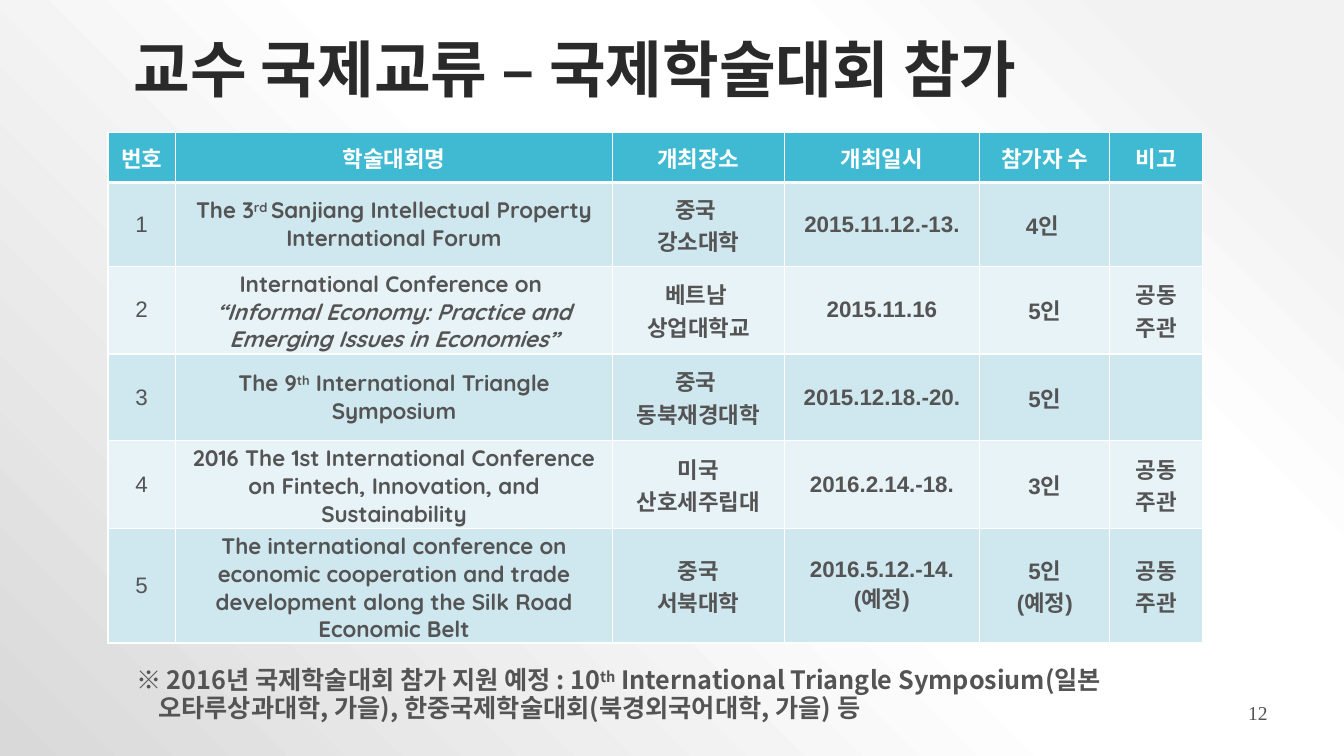
from lxml import etree
from pptx import Presentation
from pptx.dml.color import RGBColor
from pptx.enum.text import MSO_ANCHOR, PP_ALIGN
from pptx.oxml import parse_xml
from pptx.oxml.ns import qn
from pptx.util import Cm, Pt

CENTER, LEFT, RIGHT = PP_ALIGN.CENTER, PP_ALIGN.LEFT, PP_ALIGN.RIGHT
TOP, MIDDLE = MSO_ANCHOR.TOP, MSO_ANCHOR.MIDDLE
DRAWING = "http://schemas.openxmlformats.org/drawingml/2006/main"

KOREAN = "Noto Sans CJK KR"
WHITE, TEAL, GREY, DARK = "FFFFFF", "40BAD2", "545454", "2A2A2A"
BANDS = ("E8F3F7", "CFE7EE")
BACKGROUND_STOPS = [(10, "F2F2F2"), (28, WHITE), (48, WHITE), (100, "D9D9D9")]

TITLE_FORMAT = {"size": Pt(44), "name": KOREAN, "bold": True}
NUMBER_FORMAT = {"size": Pt(14), "name": "Times New Roman"}
NOTE_FORMAT = {"size": Pt(18), "name": KOREAN, "bold": True}
CELL_FORMAT = {"size": Pt(16), "name": "Arial", "bold": True}
INDEX_FORMAT = {**CELL_FORMAT, "bold": False}
CONFERENCE_FORMAT = {**CELL_FORMAT, "name": "Quicksand"}

COLUMN_WIDTHS = (1.7, 11.02, 4.32, 4.93, 3.28, 2.34)
ROW_HEIGHTS = (1.27, 2.11, 2.01, 2.18, 1.8, 2.44)
CELL_MARGINS = {"margin_left": Cm(0.18), "margin_right": Cm(0.18),
                "margin_top": Cm(0.09), "margin_bottom": Cm(0.09)}

CONFERENCES = [
    ("번호", "학술대회명", "개최장소", "개최일시", "참가자 수", "비고"),
    ("1", "The 3^rd ^Sanjiang Intellectual Property International Forum",
     "중국 \n강소대학", "2015.11.12.-13.", "4인 ", ""),
    ("2", "International Conference on \n"
     "“Informal Economy: Practice and Emerging Issues in Economies”",
     "베트남 \n상업대학교", "2015.11.16", "5인", "공동\n주관"),
    ("3", "The 9^th^ International Triangle Symposium",
     "중국 \n동북재경대학", "2015.12.18.-20.", "5인", ""),
    ("4", "2016 The 1st International Conference on Fintech, Innovation, and Sustainability",
     "미국\n산호세주립대", "2016.2.14.-18.", "3인", "공동\n주관"),
    ("5", "The international conference on economic cooperation and trade "
     "development along the Silk Road Economic Belt",
     "중국\n서북대학", "2016.5.12.-14.\n(예정)", "5인\n(예정)", "공동\n주관"),
]
NOTE = ("※ 2016년 국제학술대회 참가 지원 예정 : 10^th^ International Triangle Symposium(일본\n"
        "오타루상과대학, 가을), 한중국제학술대회(북경외국어대학, 가을) 등")


def paint(fill, color):
    fill.solid()
    fill.fore_color.rgb = RGBColor.from_string(color)


def add_span(para, text, formats, color, raised):
    span = para.add_run()
    span.text = text
    for key, value in formats.items():
        setattr(span.font, key, value)
    paint(span.font.fill, color)
    properties = span._r.get_or_add_rPr()
    etree.SubElement(properties, qn("a:ea"), typeface=KOREAN)
    if raised:
        properties.set("baseline", "30000")


def write(frame, text, formats, color, align, spacing=1.0):
    for index, line in enumerate(text.split("\n")):
        para = frame.add_paragraph() if index else frame.paragraphs[0]
        para.alignment = align
        para.line_spacing = spacing
        line_formats = {**formats, "italic": line.startswith("“")}
        for part, piece in enumerate(line.split("^")):
            if piece:
                add_span(para, piece, line_formats, color, part % 2 == 1)


def add_text(page, place, text, formats, color, align=LEFT, anchor=TOP, spacing=1.0):
    box = page.shapes.add_textbox(*map(Cm, place))
    box.text_frame.word_wrap = True
    box.text_frame.vertical_anchor = anchor
    write(box.text_frame, text, formats, color, align, spacing)
    return box


def set_borders(cell, top, bottom):
    properties = cell._tc.get_or_add_tcPr()
    widths = {"lnL": 1, "lnR": 1, "lnT": top, "lnB": bottom}
    for index, (side, width) in enumerate(widths.items()):
        line = etree.Element(qn(f"a:{side}"), w=str(Pt(width)))
        fill = etree.SubElement(line, qn("a:solidFill"))
        etree.SubElement(fill, qn("a:srgbClr"), val=WHITE)
        properties.insert(index, line)


def fill_cell(cell, text, row, column):
    for key, value in CELL_MARGINS.items():
        setattr(cell, key, value)
    cell.vertical_anchor = MIDDLE
    paint(cell.fill, BANDS[row % 2] if row else TEAL)
    set_borders(cell, 3 if row == 1 else 1, 1 if row else 3)
    formats = CELL_FORMAT
    if row and column < 2:
        formats = (INDEX_FORMAT, CONFERENCE_FORMAT)[column]
    write(cell.text_frame, text, formats, GREY if row else WHITE, CENTER)


def add_conference_table(page):
    size = (sum(COLUMN_WIDTHS), sum(ROW_HEIGHTS))
    table = page.shapes.add_table(len(ROW_HEIGHTS), len(COLUMN_WIDTHS),
                                  Cm(2.72), Cm(3.33), *map(Cm, size)).table
    for column, width in zip(table.columns, COLUMN_WIDTHS):
        column.width = Cm(width)
    for row, height in zip(table.rows, ROW_HEIGHTS):
        row.height = Cm(height)
    for row, texts in enumerate(CONFERENCES):
        for column, text in enumerate(texts):
            fill_cell(table.cell(row, column), text, row, column)


def set_background(page):
    page.background.fill.solid()
    stops = "".join(f'<a:gs pos="{position * 1000}"><a:srgbClr val="{color}"/></a:gs>'
                    for position, color in BACKGROUND_STOPS)
    gradient = parse_xml(
        f'<a:gradFill xmlns:a="{DRAWING}" rotWithShape="1"><a:gsLst>{stops}</a:gsLst>'
        '<a:path path="circle"><a:fillToRect l="100000" b="100000"/></a:path></a:gradFill>')
    solid = next(page.background._cSld.iter(qn("a:solidFill")))
    solid.getparent().replace(solid, gradient)


def main():
    deck = Presentation()
    deck.slide_width, deck.slide_height = Cm(33.87), Cm(19.05)
    page = deck.slides.add_slide(deck.slide_layouts[6])
    set_background(page)
    add_text(page, (3.12, 0, 29.08, 3.68), "교수 국제교류 – 국제학술대회 참가",
             TITLE_FORMAT, DARK, anchor=MIDDLE, spacing=0.9)
    add_text(page, (26.92, 17.53, 5.28, 1.27), "12", NUMBER_FORMAT, GREY, align=RIGHT)
    add_conference_table(page)
    note = add_text(page, (3.18, 16.71, 26.47, 1.65), NOTE, NOTE_FORMAT, GREY, spacing=0.9)
    second_line = note.text_frame.paragraphs[1]
    second_line._p.get_or_add_pPr().set("marL", str(Cm(0.56)))
    deck.save("out.pptx")


if __name__ == "__main__":
    main()
